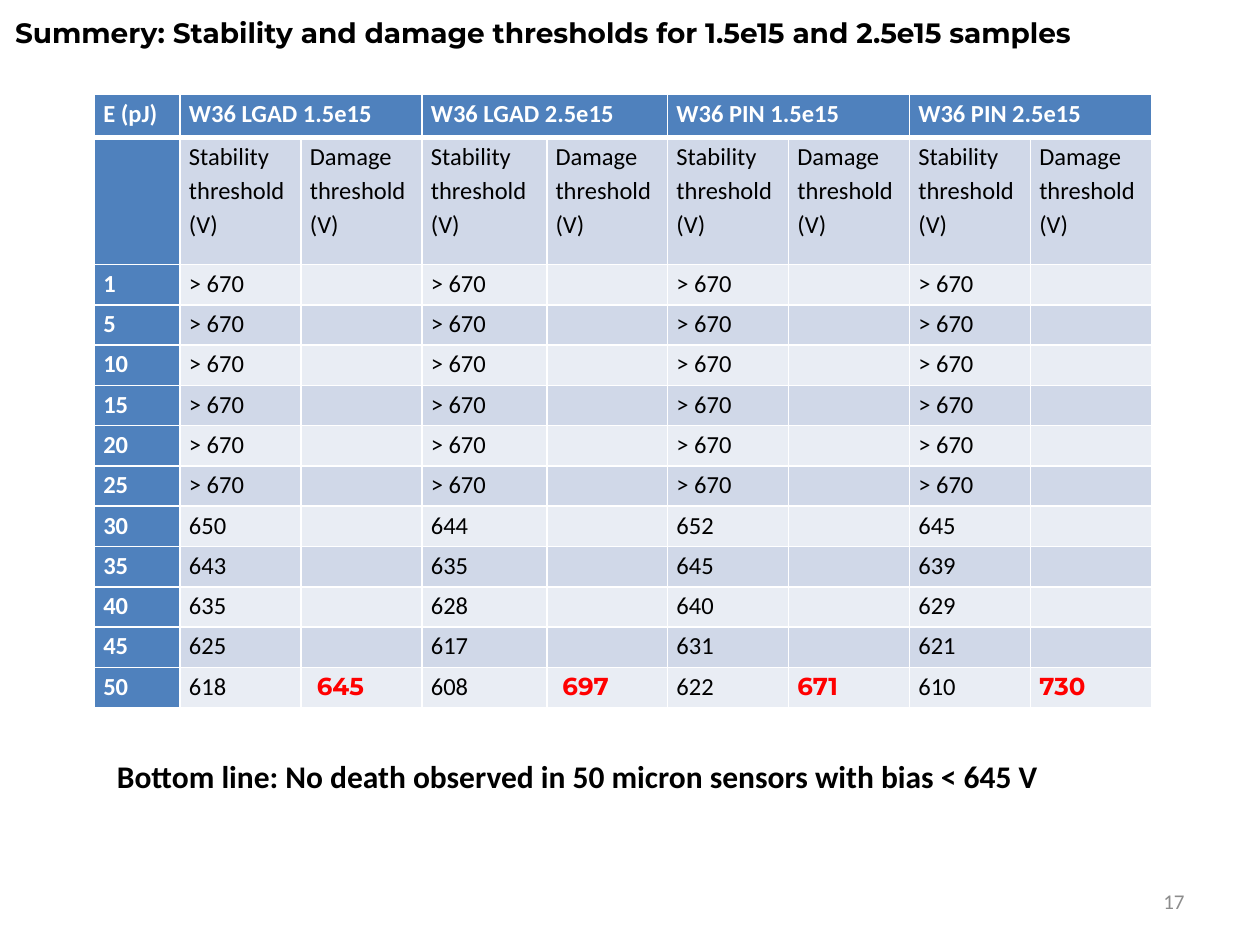
from lxml.etree import SubElement
from pptx import Presentation
from pptx.dml.color import RGBColor
from pptx.enum.text import MSO_ANCHOR, PP_ALIGN
from pptx.oxml.ns import qn
from pptx.util import Inches, Pt

BLACK = RGBColor(0x00, 0x00, 0x00)
WHITE = RGBColor(0xFF, 0xFF, 0xFF)
RED = RGBColor(0xFF, 0x00, 0x00)
GRAY = RGBColor(0x8C, 0x8C, 0x8C)
BLUE = RGBColor(0x4F, 0x81, 0xBD)
BANDS = (RGBColor(0xE9, 0xED, 0xF4), RGBColor(0xD0, 0xD8, 0xE8))

SAMPLES = ["W36 LGAD 1.5e15", "W36 LGAD 2.5e15", "W36 PIN 1.5e15", "W36 PIN 2.5e15"]
THRESHOLDS = ["Stability\nthreshold\n(V)", "Damage\nthreshold\n(V)"]
STABILITY = {energy: ["> 670"] * 4 for energy in (1, 5, 10, 15, 20, 25)} | {
    30: [650, 644, 652, 645],
    35: [643, 635, 645, 639],
    40: [635, 628, 640, 629],
    45: [625, 617, 631, 621],
    50: [618, 608, 622, 610],
}
DAMAGE = {50: [" 645", " 697", "671", "730"]}

COL_WIDTHS = [0.68, 0.96, 0.96, 0.99] + [0.96] * 5
ROW_HEIGHTS = [0.34, 1.01] + [0.32] * len(STABILITY)


def set_font(p, size, color, bold=False, name="Calibri"):
    font = p.font
    font.size, font.bold, font.name = Pt(size), bold, name
    font.color.rgb = color


def place(sp, left, top, width, height):
    sp.left, sp.top = Inches(left), Inches(top)
    sp.width, sp.height = Inches(width), Inches(height)


def write_line(sp, text, size, color, bold=False, name="Calibri",
               align=PP_ALIGN.LEFT, anchor=MSO_ANCHOR.TOP):
    tf = sp.text_frame
    tf.word_wrap = True
    tf.vertical_anchor = anchor
    p = tf.paragraphs[0]
    p.text, p.alignment = text, align
    set_font(p, size, color, bold, name)


def add_label(slide, box, *args, **kwargs):
    sp = slide.shapes.add_textbox(*map(Inches, box))
    write_line(sp, *args, **kwargs)


def set_borders(cell, top=1, bottom=1):
    """Draw white borders; call before the fill, which must follow them in the XML."""
    tc_pr = cell._tc.get_or_add_tcPr()
    for side, width in (("L", 1), ("R", 1), ("T", top), ("B", bottom)):
        ln = SubElement(tc_pr, qn(f"a:ln{side}"), w=str(Pt(width)))
        fill = SubElement(ln, qn("a:solidFill"))
        SubElement(fill, qn("a:srgbClr"), val=str(WHITE))


def table_rows():
    """Return the cell texts, with stability and damage columns interleaved."""
    header = ["E (pJ)"] + [text for name in SAMPLES for text in (name, "")]
    rows = [header, [""] + THRESHOLDS * len(SAMPLES)]
    for energy, stability in STABILITY.items():
        damage = DAMAGE.get(energy, [""] * len(SAMPLES))
        pairs = zip(stability, damage)
        rows.append([str(energy)] + [str(v) for pair in pairs for v in pair])
    return rows


def format_cell(cell, row, col, text):
    is_header = row == 0 or col == 0
    is_damage = row > 1 and col > 0 and col % 2 == 0
    set_borders(cell, top=3 if row == 1 else 1, bottom=3 if row == 0 else 1)
    cell.fill.solid()
    cell.fill.fore_color.rgb = BLUE if is_header else BANDS[row % 2]
    cell.margin_left = cell.margin_right = Inches(0.07)
    cell.margin_top = cell.margin_bottom = 0
    cell.text = text
    for p in cell.text_frame.paragraphs:
        p.line_spacing = 1.15
        if is_damage and text:
            set_font(p, 14, RED, True, "Montserrat")
        else:
            set_font(p, 14, WHITE if is_header else BLACK, is_header)


def add_threshold_table(slide, left, top):
    rows = table_rows()
    table = slide.shapes.add_table(
        len(rows), len(COL_WIDTHS), Inches(left), Inches(top),
        Inches(sum(COL_WIDTHS)), Inches(sum(ROW_HEIGHTS))).table
    for column, width in zip(table.columns, COL_WIDTHS):
        column.width = Inches(width)
    for row, height in zip(table.rows, ROW_HEIGHTS):
        row.height = Inches(height)
    for r, texts in enumerate(rows):
        for c, text in enumerate(texts):
            format_cell(table.cell(r, c), r, c, text)
    for c in range(1, len(COL_WIDTHS), 2):
        table.cell(0, c).merge(table.cell(0, c + 1))


def main():
    prs = Presentation()
    prs.slide_width, prs.slide_height = Inches(10), Inches(7.5)
    slide = prs.slides.add_slide(prs.slide_layouts[5])

    title = slide.shapes.title
    place(title, 0.02, 0.07, 9.3, 0.37)
    write_line(title, "Summery: Stability and damage thresholds for 1.5e15 and 2.5e15 samples",
               16, BLACK, True, "Montserrat")
    add_threshold_table(slide, 0.75, 0.75)
    add_label(slide, (7.17, 6.95, 2.33, 0.4), "17", 12, GRAY,
              align=PP_ALIGN.RIGHT, anchor=MSO_ANCHOR.MIDDLE)
    add_label(slide, (0.83, 5.96, 8.17, 0.4),
              "Bottom line: No death observed in 50 micron sensors with bias < 645 V",
              18, BLACK, True)
    prs.save("out.pptx")


if __name__ == "__main__":
    main()
